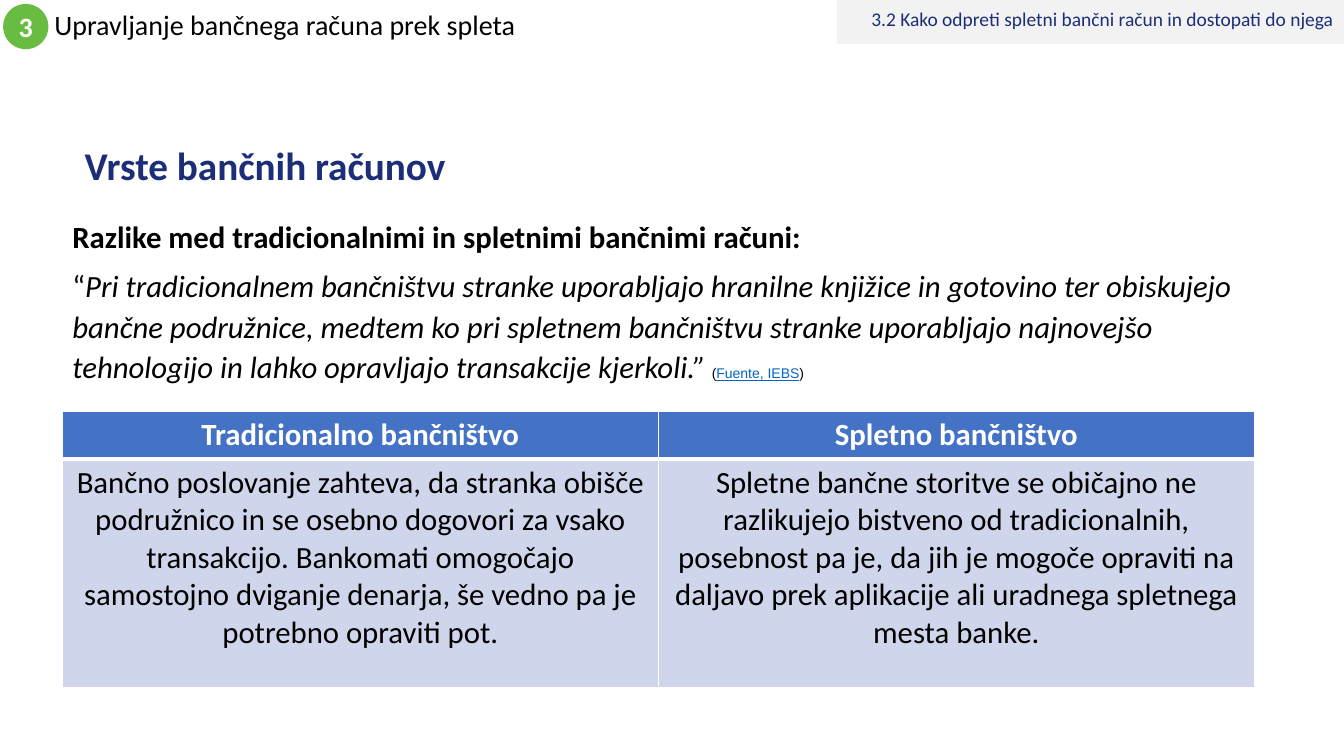
from dataclasses import dataclass

from lxml.etree import SubElement
from pptx import Presentation
from pptx.dml.color import RGBColor
from pptx.enum.shapes import MSO_SHAPE
from pptx.enum.text import MSO_ANCHOR, MSO_AUTO_SIZE, PP_ALIGN
from pptx.oxml.ns import qn
from pptx.util import Cm, Pt


@dataclass(frozen=True)
class Theme:
    font: str = "Calibri"
    source_font: str = "Arial"
    black: str = "000000"
    white: str = "FFFFFF"
    navy: str = "1C2E78"
    green: str = "68BC42"
    light_gray: str = "F2F2F2"
    header_blue: str = "4472C4"
    cell_blue: str = "CFD5EA"
    link_blue: str = "0563C1"
    title_size: float = 28
    body_size: float = 22
    chapter_size: float = 20
    gap_size: float = 18
    section_size: float = 13.9
    source_size: float = 10


class SlideBuilder:
    def __init__(self, slide, theme):
        self.slide = slide
        self.theme = theme

    def place(self, element, box):
        element.left, element.top, element.width, element.height = map(Cm, box)

    def style(self, paragraph, size, color, bold=False, align=PP_ALIGN.LEFT, spacing=1.0):
        paragraph.alignment = align
        paragraph.line_spacing = spacing
        font = paragraph.font
        font.name, font.size, font.bold = self.theme.font, Pt(size), bold
        font.color.rgb = RGBColor.from_string(color)

    def label(self, box, text, size, color, **options):
        frame = self.slide.shapes.add_textbox(*map(Cm, box)).text_frame
        self.fill_frame(frame, text, size, color, **options)

    def shape(self, preset, box, fill, text, size, color, **options):
        shape = self.slide.shapes.add_shape(preset, *map(Cm, box))
        shape.shadow.inherit = False
        shape.fill.solid()
        shape.fill.fore_color.rgb = RGBColor.from_string(fill)
        shape.line.fill.background()
        self.fill_frame(shape.text_frame, text, size, color, **options)
        return shape

    def fill_frame(self, frame, text, size, color, **options):
        frame.word_wrap = True
        frame.auto_size = MSO_AUTO_SIZE.NONE
        frame.vertical_anchor = MSO_ANCHOR.MIDDLE
        frame.text = text
        self.style(frame.paragraphs[0], size, color, **options)

    def title(self, box, text):
        title = self.slide.shapes.title
        self.place(title, box)
        self.fill_frame(title.text_frame, text, self.theme.title_size,
                        self.theme.navy, bold=True, spacing=0.9)

    def body(self, box, heading, quote, source):
        theme = self.theme
        body = self.slide.placeholders[1]
        self.place(body, box)
        frame = body.text_frame
        frame.auto_size = MSO_AUTO_SIZE.NONE
        frame.vertical_anchor = MSO_ANCHOR.TOP

        heading_line = frame.paragraphs[0]
        heading_line.text = heading
        quote_line = frame.add_paragraph()
        for paragraph in (heading_line, quote_line):
            properties = paragraph._p.get_or_add_pPr()
            properties.set("marL", "0")
            properties.set("indent", "0")
            SubElement(properties, qn("a:buNone"))
        self.style(heading_line, theme.body_size, theme.black, bold=True)
        self.style(quote_line, theme.body_size, theme.black, spacing=1.1)
        heading_line.space_before = Pt(0)
        quote_line.space_before = quote_line.space_after = Pt(6)

        quote_line.add_run().text = "“"
        quoted = quote_line.add_run()
        quoted.text = quote
        quoted.font.italic = True
        gap = quote_line.add_run()
        gap.text = " "
        gap.font.size = Pt(theme.gap_size)
        for part in ("(", source, ")"):
            run = quote_line.add_run()
            run.text = part
            run.font.name, run.font.size = theme.source_font, Pt(theme.source_size)
            if part == source:
                run.font.underline = True
                run.font.color.rgb = RGBColor.from_string(theme.link_blue)

    def border(self, cell, side, width):
        line = SubElement(cell._tc.get_or_add_tcPr(), qn(f"a:ln{side}"), w=str(Pt(width)))
        SubElement(SubElement(line, qn("a:solidFill")), qn("a:srgbClr"), val=self.theme.white)

    def table(self, box, rows, row_heights):
        """Draw a comparison table whose first row is the header."""
        theme = self.theme
        table = self.slide.shapes.add_table(len(rows), len(rows[0]), *map(Cm, box)).table
        table.horz_banding = False
        for r, (texts, height) in enumerate(zip(rows, row_heights)):
            table.rows[r].height = Cm(height)
            header = r == 0
            for c, text in enumerate(texts):
                cell = table.cell(r, c)
                for side in "LRTB":
                    thick = (header and side == "B") or (r == 1 and side == "T")
                    self.border(cell, side, 3 if thick else 1)
                cell.fill.solid()
                cell.fill.fore_color.rgb = RGBColor.from_string(
                    theme.header_blue if header else theme.cell_blue)
                cell.text = text
                self.style(cell.text_frame.paragraphs[0], theme.body_size,
                           theme.white if header else theme.black,
                           bold=header, align=PP_ALIGN.CENTER)


def main():
    theme = Theme()
    presentation = Presentation()
    presentation.slide_width, presentation.slide_height = Cm(33.87), Cm(19.05)
    slide = presentation.slides.add_slide(presentation.slide_layouts[1])
    builder = SlideBuilder(slide, theme)

    builder.label((1.12, 0.1, 20.32, 1.14), "Upravljanje bančnega računa prek spleta",
                  theme.chapter_size, theme.black, spacing=0.9)
    chapter_badge = builder.shape(MSO_SHAPE.OVAL, (0.08, 0.1, 1.14, 1.14), theme.green, "3",
                                  theme.chapter_size, theme.white, bold=True,
                                  align=PP_ALIGN.CENTER)
    chapter_badge.text_frame.margin_left = chapter_badge.text_frame.margin_right = 0
    chapter_badge.text_frame.margin_top = chapter_badge.text_frame.margin_bottom = 0

    builder.title((1.88, 3.45, 30.48, 1.57), "Vrste bančnih računov")
    builder.body(
        (1.57, 5.36, 30.73, 10.95),
        "Razlike med tradicionalnimi in spletnimi bančnimi računi:",
        "Pri tradicionalnem bančništvu stranke uporabljajo hranilne knjižice in gotovino "
        "ter obiskujejo bančne podružnice, medtem ko pri spletnem bančništvu stranke "
        "uporabljajo najnovejšo tehnologijo in lahko opravljajo transakcije kjerkoli.”",
        "Fuente, IEBS")
    builder.table(
        (1.57, 10.37, 30.04, 6.95),
        [("Tradicionalno bančništvo", "Spletno bančništvo"),
         ("Bančno poslovanje zahteva, da stranka obišče podružnico in se osebno dogovori "
          "za vsako transakcijo. Bankomati omogočajo samostojno dviganje denarja, še vedno "
          "pa je potrebno opraviti pot.",
          "Spletne bančne storitve se običajno ne razlikujejo bistveno od tradicionalnih, "
          "posebnost pa je, da jih je mogoče opraviti na daljavo prek aplikacije ali "
          "uradnega spletnega mesta banke.")],
        (1.2, 5.75))
    builder.shape(MSO_SHAPE.RECTANGLE, (21.09, 0, 12.78, 1.11), theme.light_gray,
                  "3.2 Kako odpreti spletni bančni račun in dostopati do njega",
                  theme.section_size, theme.navy, align=PP_ALIGN.RIGHT, spacing=0.7)

    presentation.save("out.pptx")


if __name__ == "__main__":
    main()
